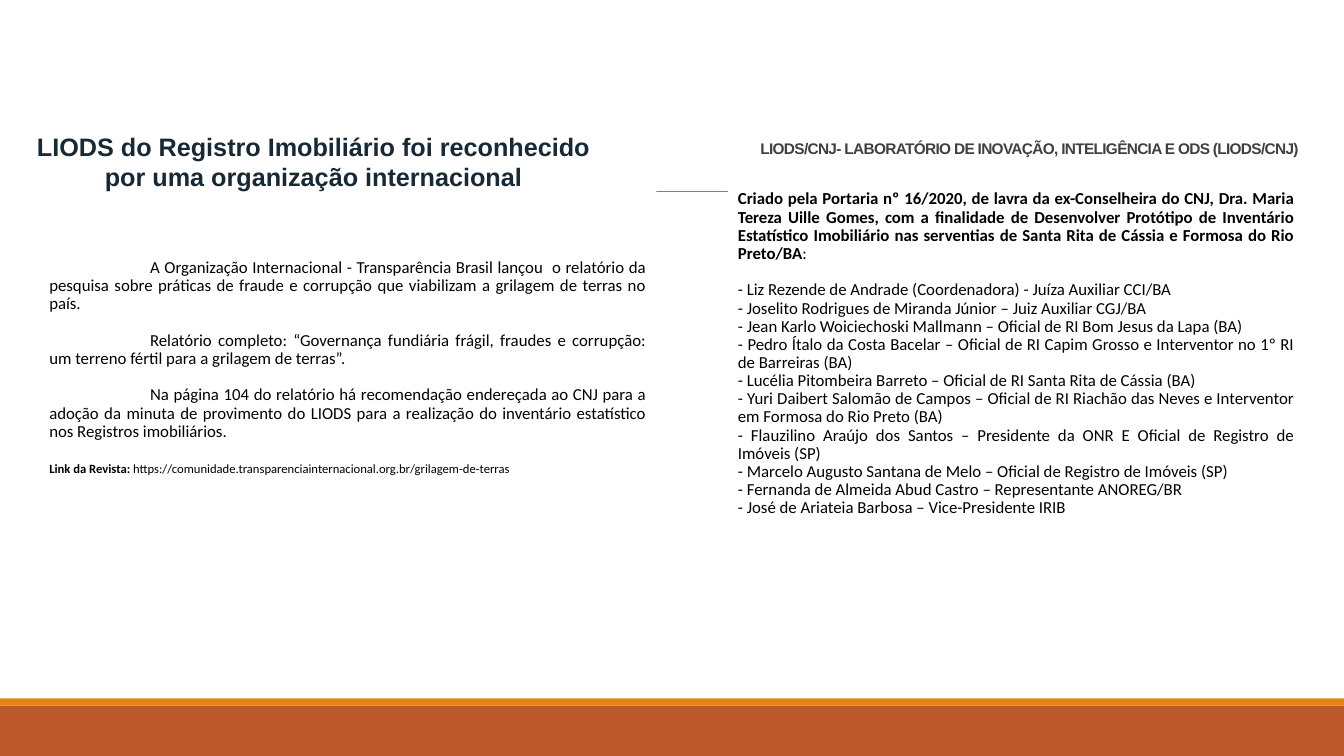
from dataclasses import dataclass

from lxml.etree import SubElement
from pptx import Presentation
from pptx.dml.color import RGBColor
from pptx.enum.shapes import MSO_CONNECTOR, MSO_SHAPE
from pptx.enum.text import MSO_ANCHOR, PP_ALIGN
from pptx.oxml.ns import qn
from pptx.util import Inches, Pt


@dataclass(frozen=True)
class Theme:
    rust: str = "BD582C"
    orange: str = "E48312"
    rule: str = "808080"
    paper: str = "FFFFFF"
    ink: str = "000000"
    navy: str = "172934"
    gray: str = "404040"
    heading_size: float = 18
    body_size: float = 12
    title_size: float = 11
    link_size: float = 9
    heading_font: str = "Arial"
    body_font: str = "Calibri"


theme = Theme()


def add_block(bounds, fill):
    block = slide.shapes.add_shape(MSO_SHAPE.RECTANGLE, *map(Inches, bounds))
    block.shadow.inherit = False
    block.fill.solid()
    block.fill.fore_color.rgb = RGBColor.from_string(fill)
    block.line.fill.background()
    return block


def write_paragraph(frame, index, parts, layout, size, color, font_name):
    paragraph = frame.paragraphs[0] if index == 0 else frame.add_paragraph()
    for attribute, value in layout.items():
        setattr(paragraph, attribute, value)
    for text, bold in parts:
        run = paragraph.add_run()
        run.text = text
        run.font.color.rgb = RGBColor.from_string(color)
        style = {"name": font_name, "size": Pt(size), "bold": bold}
        for attribute, value in style.items():
            setattr(run.font, attribute, value)
    return paragraph


presentation = Presentation()
presentation.slide_width = Inches(13.33)
presentation.slide_height = Inches(7.5)
slide = presentation.slides.add_slide(presentation.slide_layouts[6])

add_block((0, 7, 13.33, 0.5), theme.rust)
add_block((0, 6.93, 13.33, 0.07), theme.orange)

divider = slide.shapes.add_connector(
    MSO_CONNECTOR.STRAIGHT, Inches(1.31), Inches(1.9), Inches(12.21), Inches(1.9)
)
divider.line.color.rgb = RGBColor.from_string(theme.rule)
divider.line.width = Pt(0.5)
SubElement(divider._element.spPr, qn("a:effectLst"))

members = [
    "Liz Rezende de Andrade (Coordenadora) - Juíza Auxiliar CCI/BA",
    "Joselito Rodrigues de Miranda Júnior – Juiz Auxiliar CGJ/BA",
    "Jean Karlo Woiciechoski Mallmann – Oficial de RI Bom Jesus da Lapa (BA)",
    "Pedro Ítalo da Costa Bacelar – Oficial de RI Capim Grosso e Interventor no 1º RI de Barreiras (BA)",
    "Lucélia Pitombeira Barreto – Oficial de RI Santa Rita de Cássia (BA)",
    "Yuri Daibert Salomão de Campos – Oficial de RI Riachão das Neves e Interventor em Formosa do Rio Preto (BA)",
    "Flauzilino Araújo dos Santos – Presidente da ONR E Oficial de Registro de Imóveis (SP)",
    "Marcelo Augusto Santana de Melo – Oficial de Registro de Imóveis (SP)",
    "Fernanda de Almeida Abud Castro – Representante ANOREG/BR",
    "José de Ariateia Barbosa – Vice-Presidente IRIB",
]
ordinance = (
    "Criado pela Portaria nº 16/2020, de lavra da ex-Conselheira do CNJ, Dra. Maria Tereza Uille Gomes, "
    "com a finalidade de Desenvolver Protótipo de Inventário Estatístico Imobiliário nas serventias "
    "de Santa Rita de Cássia e Formosa do Rio Preto/BA"
)
laboratory = [([(ordinance, True), (":", False)], 0, 0, theme.body_size)]
for number, member in enumerate(members):
    gap = 13.2 if number == 0 else 0
    laboratory.append(([(f"- {member}", False)], gap, 0, theme.body_size))

findings = [
    "A Organização Internacional - Transparência Brasil lançou  o relatório da pesquisa sobre práticas "
    "de fraude e corrupção que viabilizam a grilagem de terras no país.",
    "Relatório completo: “Governança fundiária frágil, fraudes e corrupção: um terreno fértil "
    "para a grilagem de terras”.",
    "Na página 104 do relatório há recomendação endereçada ao CNJ para a adoção da minuta de provimento "
    "do LIODS para a realização do inventário estatístico nos Registros imobiliários.",
]
report = []
for number, finding in enumerate(findings):
    gap = 13.2 if number else 0
    report.append(([(finding, False)], gap, 1, theme.body_size))
report_link = [
    ("Link da Revista: ", True),
    ("https://comunidade.transparenciainternacional.org.br/grilagem-de-terras", False),
]
report.append((report_link, 15.4, 0, theme.link_size))

for bounds, content in [
    ((7.22, 1.25, 5.72, 4.52), laboratory),
    ((0.39, 1.04, 6.12, 5.21), report),
]:
    panel = add_block(bounds, theme.paper).text_frame
    panel.word_wrap = True
    panel.vertical_anchor = MSO_ANCHOR.MIDDLE
    for index, (parts, gap, indent, size) in enumerate(content):
        layout = {
            "alignment": PP_ALIGN.JUSTIFY,
            "line_spacing": 0.9,
            "space_before": Pt(gap),
        }
        paragraph = write_paragraph(panel, index, parts, layout, size, theme.ink, theme.body_font)
        paragraph._p.get_or_add_pPr().set("indent", str(Inches(indent)))

headings = [
    (
        (7.22, 1.07, 5.98, 0.54), MSO_ANCHOR.BOTTOM, 0.85, theme.title_size, theme.gray, -50,
        "LIODS/CNJ- LABORATÓRIO DE INOVAÇÃO, INTELIGÊNCIA E ODS (LIODS/CNJ)",
    ),
    (
        (0.25, 1.25, 5.72, 0.71), MSO_ANCHOR.TOP, 1.0, theme.heading_size, theme.navy, 0,
        "LIODS do Registro Imobiliário foi reconhecido por uma organização internacional",
    ),
]
for bounds, anchor, spacing, size, color, tracking, text in headings:
    heading = slide.shapes.add_textbox(*map(Inches, bounds)).text_frame
    heading.word_wrap = True
    heading.vertical_anchor = anchor
    layout = {"alignment": PP_ALIGN.CENTER, "line_spacing": spacing}
    paragraph = write_paragraph(heading, 0, [(text, True)], layout, size, color, theme.heading_font)
    paragraph.runs[0]._r.get_or_add_rPr().set("spc", str(tracking))

presentation.save("out.pptx")
